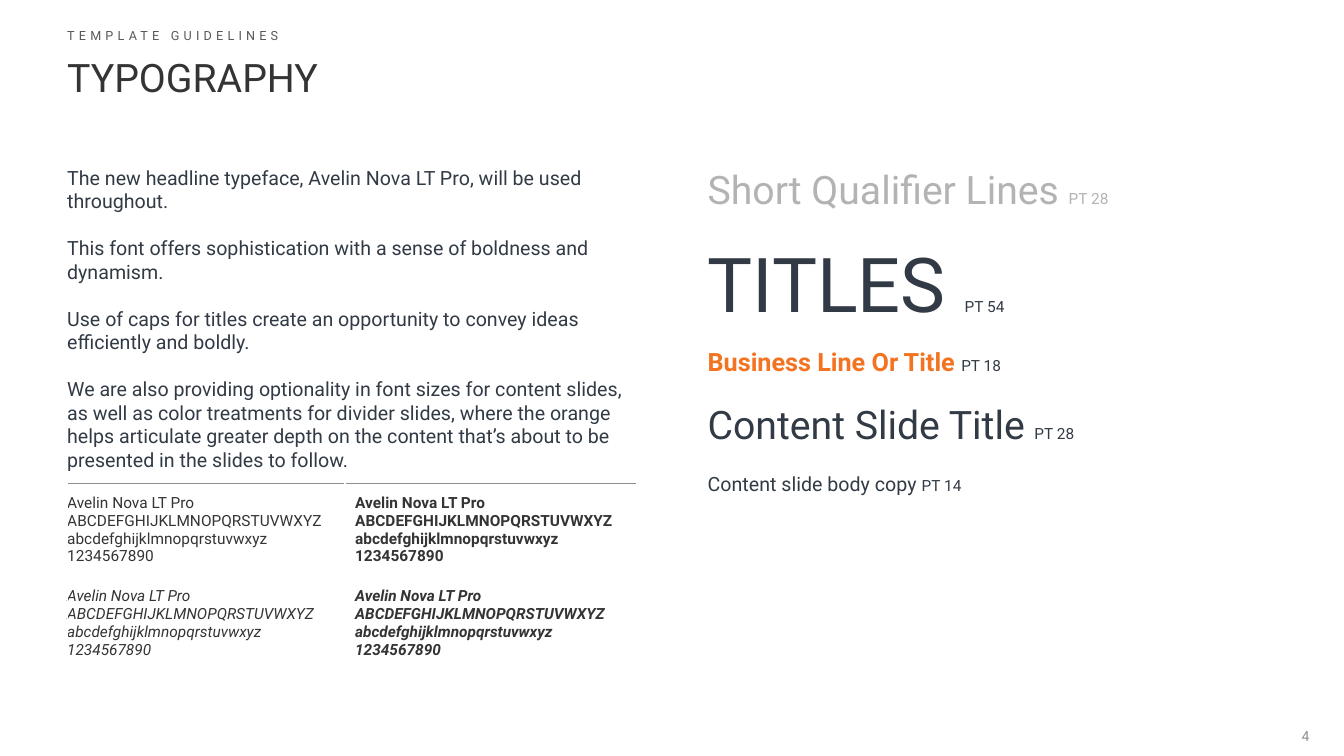
"""Build the typography guideline slide."""
from pptx import Presentation
from pptx.dml.color import RGBColor
from pptx.enum import text as tx
from pptx.oxml import parse_xml
from pptx.oxml.ns import nsdecls
from pptx.util import Pt

FACE = "Roboto"
INK, SLATE, GREY, ORANGE = "343434", "313A45", "B3B3B5", "F37320"
LEFT, RIGHT, WIDE = 48, 505.5, 407


def style(font, size=None, color=None, bold=None, italic=None):
    font.name = FACE
    font.bold, font.italic = bold, italic
    if size:
        font.size = Pt(size)
    if color:
        font.color.rgb = RGBColor.from_string(color)


def frame(shape, box, pads, anchor=tx.MSO_ANCHOR.TOP):
    shape.left, shape.top, shape.width, shape.height = map(Pt, box)
    tf = shape.text_frame
    tf.margin_left, tf.margin_top, tf.margin_right, tf.margin_bottom = map(Pt, pads)
    tf.word_wrap = True
    tf.auto_size = tx.MSO_AUTO_SIZE.NONE
    tf.vertical_anchor = anchor
    return tf


prs = Presentation()
prs.slide_width, prs.slide_height = Pt(960), Pt(540)
slide = prs.slides.add_slide(prs.slide_layouts[1])
shapes = slide.shapes

head = frame(shapes.title, (LEFT, 36, 864, 36), (0, 3.6, 0, 3.6))
head.text = "TYPOGRAPHY"
para = head.paragraphs[0]
para.alignment = tx.PP_ALIGN.LEFT
para.line_spacing = Pt(32)
style(para.font, 28, INK)

label = frame(slide.placeholders[1], (LEFT, 16.5, 864, 19.5), (0, 3.6, 7.2, 3.6))
label.text = "TEMPLATE GUIDELINES"
para = label.paragraphs[0]
props = para._p.get_or_add_pPr()
props.set("marL", "0")
props.set("indent", "0")
props.append(parse_xml(f"<a:buNone {nsdecls('a')}/>"))
para.space_before = Pt(0)
style(para.font, 9, "585855")
para.runs[0]._r.get_or_add_rPr().set("spc", "300")

samples = [
    ("Short Qualifier Lines ", 28, GREY, GREY, 117.5, 34.5, 0.7),
    ("TITLES ", 54, SLATE, SLATE, 168.5, 66, 0.7),
    ("Business Line Or Title ", 18, ORANGE, SLATE, 244, 29, 3.6),
    ("Content Slide Title ", 28, SLATE, SLATE, 282.5, 41, 3.6),
    ("Content slide body copy ", 14, SLATE, SLATE, 333.5, 24.5, 3.6),
]
for words, size, color, tint, top, high, pad in samples:
    box = (RIGHT, top, WIDE, high)
    para = frame(shapes.add_textbox(0, 0, 0, 0), box, (0, pad, 0, 0)).paragraphs[0]
    for part, pts, hue in ((words, size, color), (f"PT {size}", 11, tint)):
        run = para.add_run()
        run.text = part
        style(run.font, pts, hue, hue == ORANGE)

copy = [
    "The new headline typeface, Avelin Nova LT Pro, will be used throughout.",
    "This font offers sophistication with a sense of boldness and dynamism.",
    "Use of caps for titles create an opportunity to convey ideas efficiently and boldly.",
    "We are also providing optionality in font sizes for content slides, as well as "
    "color treatments for divider slides, where the orange helps articulate greater "
    "depth on the content that’s about to be presented in the slides to follow.",
]
body = frame(shapes.add_textbox(0, 0, 0, 0), (LEFT, 117.5, WIDE, 221), (0, 0.7, 0, 0))
body.text = "\n".join(copy)
for num, para in enumerate(body.paragraphs):
    para.space_before = Pt(16.8 if num else 0)
    style(para.font, 14, SLATE)

glyphs = "\n".join([
    "Avelin Nova LT Pro",
    "ABCDEFGHIJKLMNOPQRSTUVWXYZ",
    "abcdefghijklmnopqrstuvwxyz",
    "1234567890",
])
grid = shapes.add_table(2, 2, Pt(LEFT), Pt(345.5), Pt(WIDE), Pt(131)).table
grid.first_row = grid.horz_banding = False
for col, wide in zip(grid.columns, (198.5, 208.5)):
    col.width = Pt(wide)
for row, high in zip(grid.rows, (67, 64)):
    row.height = Pt(high)
for r in range(2):
    for c in range(2):
        cell = grid.cell(r, c)
        cell.margin_left, cell.margin_right = Pt(7.2 * c), Pt(7.2 * (1 - c))
        cell.margin_top, cell.margin_bottom = Pt(7.2), Pt(3.6 * (2 - r))
        cell.fill.background()
        cell.text = glyphs
        for para in cell.text_frame.paragraphs:
            style(para.font, 11, INK, c == 1, r == 1)
        if r == 0:
            cell._tc.get_or_add_tcPr().insert(0, parse_xml(
                f'<a:lnT {nsdecls("a")} w="9525"><a:solidFill>'
                '<a:srgbClr val="8A8F95"/></a:solidFill></a:lnT>'))

page = frame(shapes.add_textbox(0, 0, 0, 0), (899.5, 511, 43, 29),
             (7.2, 3.6, 7.2, 3.6), tx.MSO_ANCHOR.MIDDLE)
page.text = "4"
page.paragraphs[0].alignment = tx.PP_ALIGN.RIGHT
style(page.paragraphs[0].font, 10, "8F8F8F")

prs.save("out.pptx")
